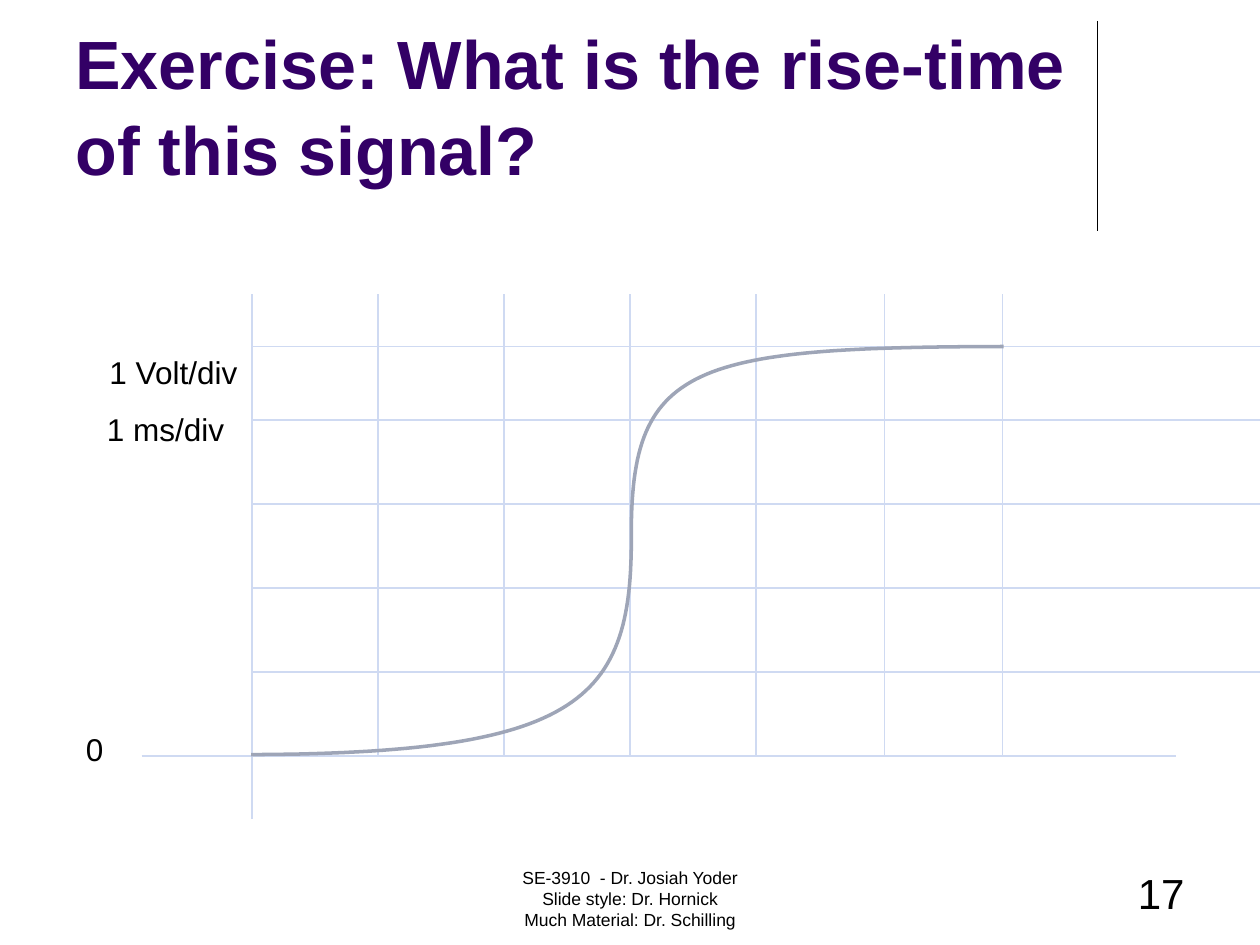
from dataclasses import dataclass

from lxml import etree
from pptx import Presentation
from pptx.dml.color import RGBColor
from pptx.enum.shapes import MSO_CONNECTOR
from pptx.enum.text import MSO_ANCHOR, PP_ALIGN
from pptx.oxml.ns import qn
from pptx.slide import Slide
from pptx.util import Pt

STRAIGHT = MSO_CONNECTOR.STRAIGHT
TOP, BOTTOM = MSO_ANCHOR.TOP, MSO_ANCHOR.BOTTOM
LEFT, CENTER, RIGHT = PP_ALIGN.LEFT, PP_ALIGN.CENTER, PP_ALIGN.RIGHT

BLACK = RGBColor(0x00, 0x00, 0x00)
PURPLE = RGBColor(0x33, 0x00, 0x66)
GRID_BLUE = RGBColor(0xCF, 0xDA, 0xF2)
SIGNAL_GRAY = RGBColor(0x9E, 0xA5, 0xB7)

FONT = "Arial"
AXIS_X, AXIS_Y = 144, 432
GRID_TOP, GRID_RIGHT = 168, 735
COLUMNS = (216, 288, 360, 432, 505.5, 573)
ROWS = (198, 240, 288, 336, 384)
CURVE_STEPS = 60

Point = tuple[float, float]
SIGNAL: tuple[tuple[Point, Point, Point, Point], ...] = (
    ((143.5, 431.2), (334, 430.5), (361.5, 399.5), (360.8, 304)),
    ((360.8, 304), (360.8, 208), (396.5, 198.5), (573.5, 198)),
)


@dataclass(frozen=True)
class Label:
    paragraphs: tuple[str, ...]
    left: float
    top: float
    width: float
    height: float
    size: float
    align: PP_ALIGN = LEFT
    anchor: MSO_ANCHOR = TOP
    color: RGBColor = BLACK
    bold: bool = False
    wrap: bool = True
    line_spacing: float = 1.0


@dataclass(frozen=True)
class Line:
    start: Point
    end: Point
    color: RGBColor = GRID_BLUE


LABELS = (
    Label(("Exercise: What is the rise-time\vof this signal?",), 36, 9.5, 594, 102, 39,
          anchor=BOTTOM, color=PURPLE, bold=True, line_spacing=1.05),
    Label(("SE-3910  - Dr. Josiah Yoder", "Slide style: Dr. Hornick",
           "Much Material: Dr. Schilling"), 246, 492, 228, 36, 10, CENTER),
    Label(("17",), 516, 492, 168, 36, 24, RIGHT),
    Label(("0",), 42, 413.5, 78, 29, 18),
    Label(("1 Volt/div",), 55.5, 198, 88.5, 29, 18, wrap=False),
    Label(("1 ms/div",), 54, 230.5, 88.5, 29, 18, wrap=False),
)

LINES = (
    Line((627, 12), (627, 132), BLACK),
    Line((81, AXIS_Y), (672, AXIS_Y)),
    Line((AXIS_X, 468), (AXIS_X, GRID_TOP)),
    *(Line((AXIS_X, y), (GRID_RIGHT, y)) for y in ROWS),
    *(Line((x, AXIS_Y), (x, GRID_TOP)) for x in COLUMNS),
)


def add_label(slide: Slide, label: Label) -> None:
    """Add a text box with one paragraph per entry of the label."""
    shape = slide.shapes.add_textbox(
        Pt(label.left), Pt(label.top), Pt(label.width), Pt(label.height))
    text_frame = shape.text_frame
    text_frame.word_wrap = label.wrap
    text_frame.vertical_anchor = label.anchor
    text_frame.text = "\n".join(label.paragraphs)
    for paragraph in text_frame.paragraphs:
        paragraph.alignment = label.align
        paragraph.line_spacing = label.line_spacing
        paragraph.font.name = FONT
        paragraph.font.size = Pt(label.size)
        paragraph.font.bold = label.bold
        paragraph.font.color.rgb = label.color


def add_line(slide: Slide, line: Line) -> None:
    """Add a thin straight connector without a shadow."""
    connector = slide.shapes.add_connector(
        STRAIGHT, *(Pt(value) for value in line.start + line.end))
    connector.line.color.rgb = line.color
    connector.line.width = Pt(0.75)
    etree.SubElement(connector._element.spPr, qn("a:effectLst"))


def bezier_point(controls: tuple[Point, ...], t: float) -> Point:
    """Return the point at parameter t of a cubic Bezier curve."""
    weights = ((1 - t) ** 3, 3 * t * (1 - t) ** 2, 3 * t ** 2 * (1 - t), t ** 3)
    return (sum(weight * x for weight, (x, _) in zip(weights, controls)),
            sum(weight * y for weight, (_, y) in zip(weights, controls)))


def add_signal(slide: Slide) -> None:
    """Draw the rising signal as a finely stepped open outline."""
    points = [bezier_point(controls, step / CURVE_STEPS)
              for controls in SIGNAL for step in range(1, CURVE_STEPS + 1)]
    start_x, start_y = SIGNAL[0][0]
    builder = slide.shapes.build_freeform(Pt(start_x), Pt(start_y))
    builder.add_line_segments([(Pt(x), Pt(y)) for x, y in points], close=False)
    shape = builder.convert_to_shape()
    shape.shadow.inherit = False
    shape.fill.background()
    shape.line.color.rgb = SIGNAL_GRAY
    shape.line.width = Pt(2)


def main() -> None:
    """Build the rise-time exercise slide."""
    presentation = Presentation()
    presentation.slide_width, presentation.slide_height = Pt(720), Pt(540)
    slide = presentation.slides.add_slide(presentation.slide_layouts[6])
    for line in LINES:
        add_line(slide, line)
    for label in LABELS:
        add_label(slide, label)
    add_signal(slide)
    presentation.save("out.pptx")


if __name__ == "__main__":
    main()
